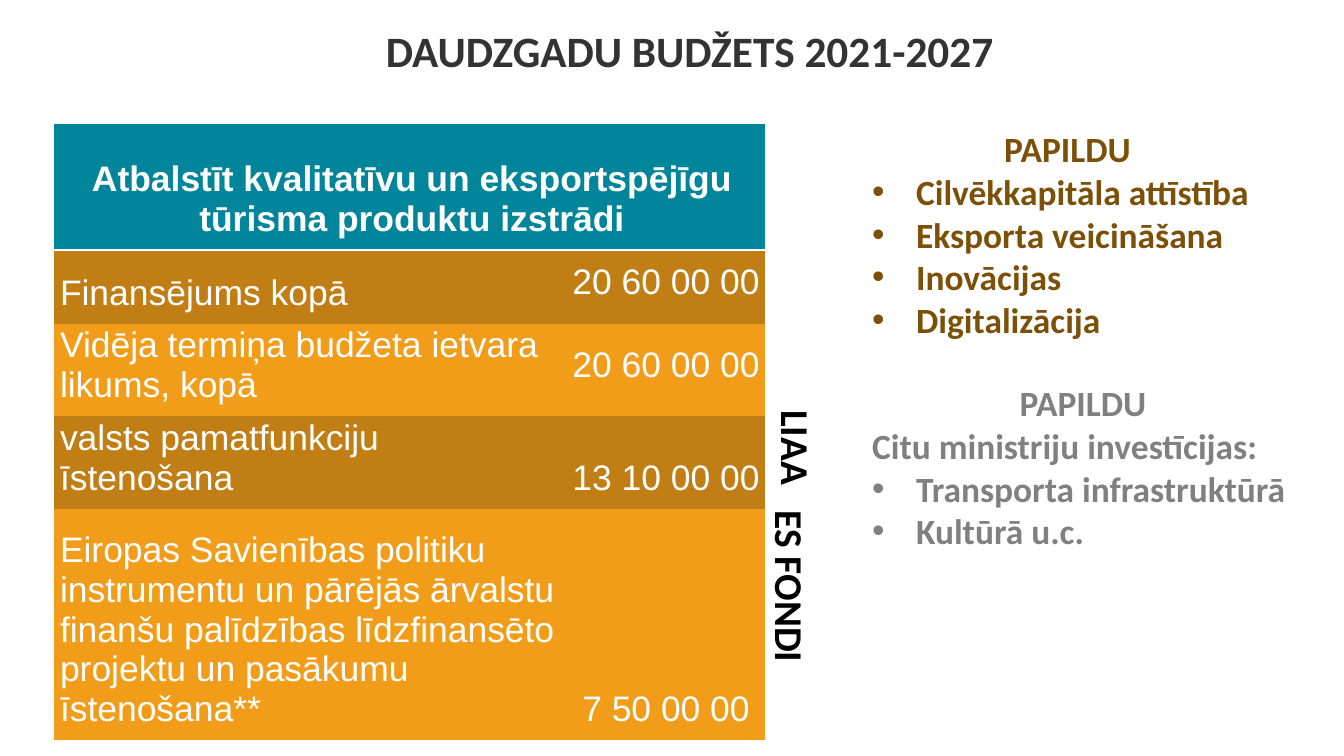
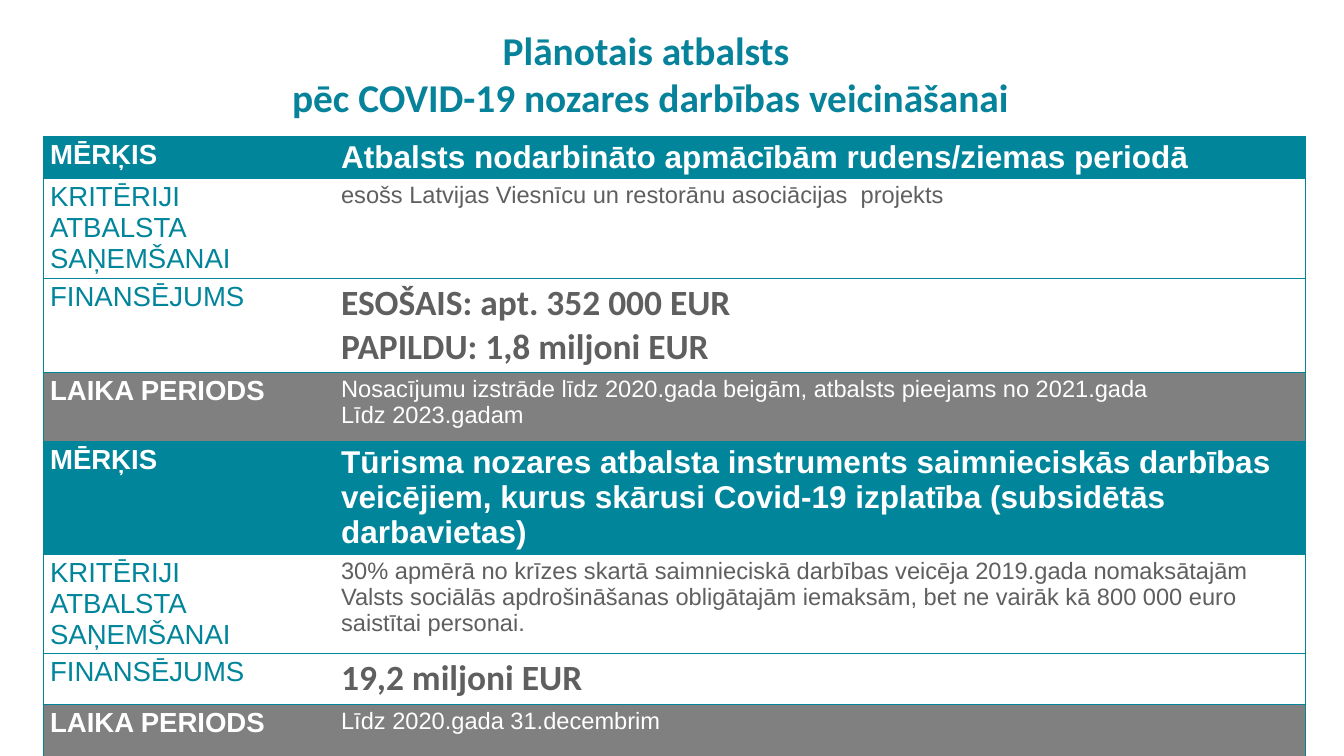
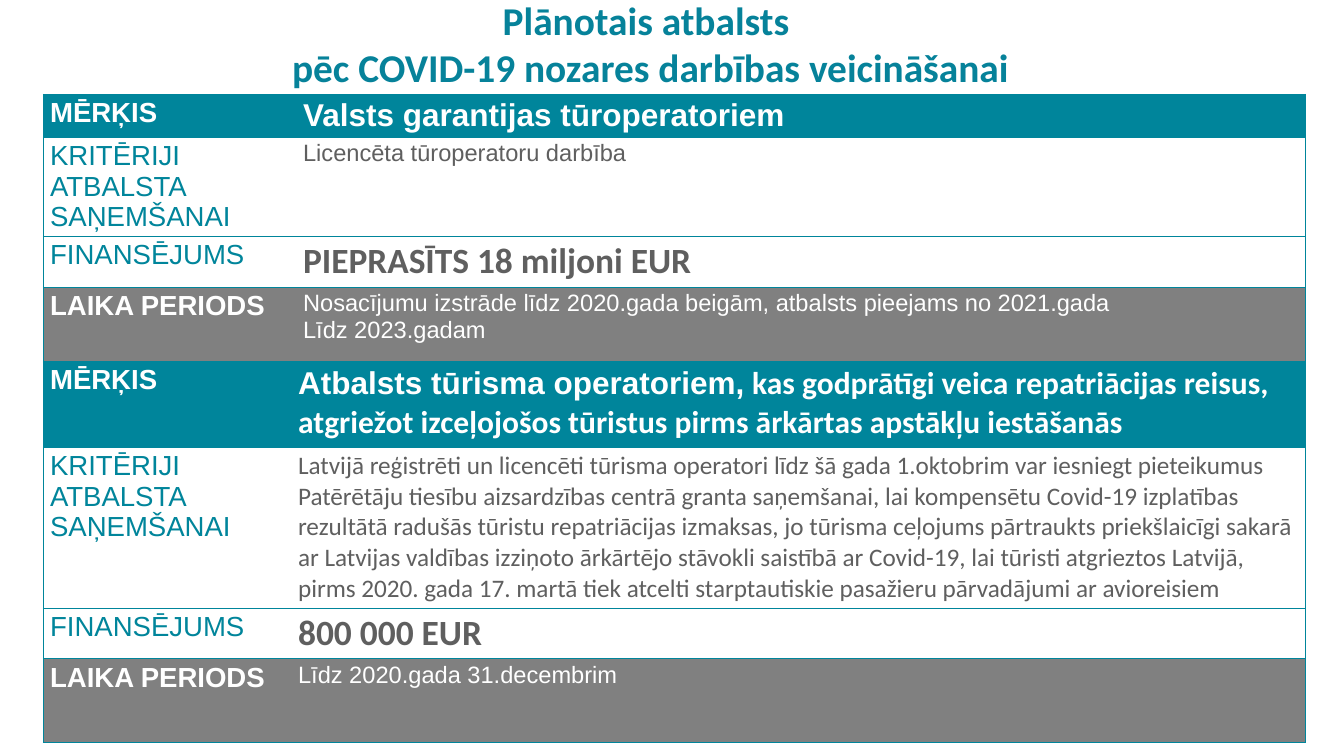
from lxml import etree
from pptx import Presentation
from pptx.dml.color import RGBColor
from pptx.enum.text import MSO_ANCHOR, MSO_AUTO_SIZE, PP_ALIGN
from pptx.oxml.ns import qn
from pptx.util import Emu, Pt

TOP, MIDDLE, BOTTOM = MSO_ANCHOR.TOP, MSO_ANCHOR.MIDDLE, MSO_ANCHOR.BOTTOM
LEFT, CENTER = PP_ALIGN.LEFT, PP_ALIGN.CENTER
NO_AUTOFIT = MSO_AUTO_SIZE.NONE
EMU_PER_PX = 12900
SLIDE_SIZE = (1344, 756)
TWO_CONTENT, TITLE_ONLY = 3, 5

TEAL, GRAY, WHITE = "00859B", "808080", "FFFFFF"
DARK_ORANGE, ORANGE = "C17E14", "F19D19"
BROWN, TEXT_GRAY = "7D5008", "5F5F5F"


def style(size, name, color, bold=False):
    return {"size": Pt(size), "name": name, "color": color, "bold": bold}


BUDGET_TITLE = style(44, "Calibri", "333333", True)
SUPPORT_TITLE = style(40, "Calibri", "06829A", True)
BUDGET_HEADER = style(36, "Arial", WHITE, True)
BUDGET_TEXT = style(36, "Arial", WHITE)
SIDE_LABEL = style(40, "Calibri", "000000", True)
GOAL = style(32, "Arial", WHITE, True)
GOAL_DETAIL = style(32, "Calibri", WHITE, True)
CRITERIA = style(24, "Arial", TEXT_GRAY)
LONG_CRITERIA = style(25.6, "Calibri", TEXT_GRAY)
AMOUNT = style(36, "Calibri", TEXT_GRAY, True)
PERIOD = style(24, "Arial", WHITE)
LABEL = style(28, "Arial", TEAL)
BAND_LABEL = style(28, "Arial", WHITE, True)

BUDGET = {
    "title": "DAUDZGADU BUDŽETS 2021-2027",
    "box": (54, 124), "columns": (508, 203), "heights": (126, 74, 92, 93, 231),
    "header": "Atbalstīt kvalitatīvu un eksportspējīgu tūrisma produktu izstrādi",
    "rows": [
        ("Finansējums kopā", "20 60 00 00", MIDDLE),
        ("Vidēja termiņa budžeta ietvara likums, kopā", "20 60 00 00", MIDDLE),
        ("valsts pamatfunkciju īstenošana", "13 10 00 00", BOTTOM),
        ("Eiropas Savienības politiku instrumentu un pārējās ārvalstu finanšu "
         "palīdzības līdzfinansēto projektu un pasākumu īstenošana**",
         "7 50 00 00", BOTTOM),
    ],
}
# Each list line: text, alignment, bulleted
EXTRA_LISTS = [
    ((865, 124, 405, 222), BROWN, [
        ("PAPILDU", CENTER, False),
        ("Cilvēkkapitāla attīstība", LEFT, True),
        ("Eksporta veicināšana", LEFT, True),
        ("Inovācijas", LEFT, True),
        ("Digitalizācija", LEFT, True)]),
    ((865, 378, 436, 179), GRAY, [
        ("PAPILDU", CENTER, False),
        ("Citu ministriju investīcijas:", LEFT, False),
        ("Transporta infrastruktūrā", LEFT, True),
        ("Kultūrā u.c.", LEFT, True)]),
]
SIDE_LABELS = [("LIAA", (664, 420, 265, 55)), ("ES FONDI", (658, 559, 265, 55))]

SUPPORT_HEADING = ["Plānotais atbalsts ", "pēc COVID-19 nozares darbības veicināšanai"]
# Label, label style, fill
SUPPORT_ROWS = [
    ("MĒRĶIS", BAND_LABEL, TEAL),
    ("KRITĒRIJI  ATBALSTA SAŅEMŠANAI", LABEL, WHITE),
    ("FINANSĒJUMS", LABEL, WHITE),
    ("LAIKA PERIODS", BAND_LABEL, GRAY),
]
FROM_2021 = [
    [("Nosacījumu izstrāde līdz 2020.gada beigām, atbalsts pieejams no 2021.gada", PERIOD)],
    [("Līdz 2023.gadam", PERIOD)],
]
UNTIL_DECEMBER = [[("Līdz 2020.gada 31.decembrim", PERIOD)]]
# Each value is a list of paragraphs, each paragraph a list of (text, style) runs
SUPPORT_SLIDES = [
    {"title_top": 0, "tables": [
        {"top": 136, "label_width": 291, "heights": (42, 100, 94, 69), "values": [
            [[("Atbalsts nodarbināto apmācībām rudens/ziemas periodā", GOAL)]],
            [[("esošs Latvijas Viesnīcu un restorānu asociācijas  projekts", CRITERIA)]],
            [[("ESOŠAIS: apt. 352 000 EUR", AMOUNT)],
             [("PAPILDU: 1,8 miljoni EUR", AMOUNT)]],
            FROM_2021]},
        {"top": 441, "label_width": 291, "heights": (113, 99, 51, 52), "values": [
            [[("Tūrisma nozares atbalsta instruments saimnieciskās darbības veicējiem, "
               "kurus skārusi Covid-19 izplatība (subsidētās darbavietas)", GOAL)]],
            [[("30% apmērā no krīzes skartā saimnieciskā darbības veicēja 2019.gada "
               "nomaksātajām Valsts sociālās apdrošināšanas obligātajām iemaksām, bet ne "
               "vairāk kā 800 000 euro saistītai personai.", CRITERIA)]],
            [[("19,2 miljoni EUR", AMOUNT)]],
            UNTIL_DECEMBER]},
    ]},
    {"title_top": -30, "tables": [
        {"top": 94, "label_width": 253, "heights": (43, 99, 50, 75), "values": [
            [[("Valsts garantijas tūroperatoriem", GOAL)]],
            [[("Licencēta tūroperatoru darbība", CRITERIA)]],
            [[("PIEPRASĪTS 18 miljoni EUR", AMOUNT)]],
            FROM_2021]},
        {"top": 361, "label_width": 248, "heights": (86, 159, 51, 84), "values": [
            [[("Atbalsts tūrisma operatoriem,", GOAL),
              (" kas godprātīgi veica repatriācijas reisus, atgriežot izceļojošos "
               "tūristus pirms ārkārtas apstākļu iestāšanās", GOAL_DETAIL)]],
            [[("Latvijā reģistrēti un licencēti tūrisma operatori līdz šā gada 1.oktobrim "
               "var iesniegt pieteikumus Patērētāju tiesību aizsardzības centrā granta "
               "saņemšanai, lai kompensētu Covid-19 izplatības rezultātā radušās tūristu "
               "repatriācijas izmaksas, jo tūrisma ceļojums pārtraukts priekšlaicīgi "
               "sakarā ar Latvijas valdības izziņoto ārkārtējo stāvokli saistībā ar "
               "Covid-19, lai tūristi atgrieztos Latvijā, pirms 2020. gada 17. martā tiek "
               "atcelti starptautiskie pasažieru pārvadājumi ar avioreisiem",
               LONG_CRITERIA)]],
            [[("800 000 EUR", AMOUNT)]],
            UNTIL_DECEMBER]},
    ]},
]
SUPPORT_LEFT, SUPPORT_WIDTH = 43, 1262


def px(value):
    return Emu(value * EMU_PER_PX)


def rgb(color):
    return RGBColor.from_string(color)


def write(frame, paragraphs, align=LEFT):
    """Fill a text frame with paragraphs given as lists of (text, style) runs."""
    for index, runs in enumerate(paragraphs):
        paragraph = frame.paragraphs[0] if index == 0 else frame.add_paragraph()
        paragraph.alignment = align
        paragraph.space_before = Pt(0)
        for text, formats in runs:
            run = paragraph.add_run()
            run.text = text
            for key, value in formats.items():
                if key == "color":
                    run.font.color.rgb = rgb(value)
                else:
                    setattr(run.font, key, value)


def place(shape, box):
    for key, value in zip(("left", "top", "width", "height"), box):
        setattr(shape, key, px(value))


def setup_frame(frame, anchor):
    for key, value in {"word_wrap": True, "auto_size": NO_AUTOFIT,
                       "vertical_anchor": anchor}.items():
        setattr(frame, key, value)


def add_title(slide, lines, formats, box, anchor):
    title = slide.shapes.title
    place(title, box)
    setup_frame(title.text_frame, anchor)
    write(title.text_frame, [[(line, formats)] for line in lines], CENTER)


def set_bullet(paragraph, bulleted):
    properties = paragraph._p.get_or_add_pPr()
    indent = px(44) if bulleted else 0
    properties.set("marL", str(indent))
    properties.set("indent", str(-indent))
    if bulleted:
        font = etree.SubElement(properties, qn("a:buFont"))
        font.set("typeface", "Arial")
        etree.SubElement(properties, qn("a:buChar")).set("char", "•")
    else:
        etree.SubElement(properties, qn("a:buNone"))


def set_borders(cell, lines):
    """Draw the sides named in lines as {side: (color, points)} and clear the others."""
    properties = cell._tc.get_or_add_tcPr()
    for index, side in enumerate("LRTB"):
        line = etree.Element(qn(f"a:ln{side}"))
        if side in lines:
            color, points = lines[side]
            line.set("w", str(Pt(points)))
            fill = etree.SubElement(line, qn("a:solidFill"))
            etree.SubElement(fill, qn("a:srgbClr")).set("val", color)
        else:
            etree.SubElement(line, qn("a:noFill"))
        properties.insert(index, line)


def add_table(slide, left, top, columns, heights):
    box = [px(value) for value in (left, top, sum(columns), sum(heights))]
    table = slide.shapes.add_table(len(heights), len(columns), *box).table
    table.first_row = table.horz_banding = False
    for column, width in zip(table.columns, columns):
        column.width = px(width)
    for row, height in zip(table.rows, heights):
        row.height = px(height)
    return table


def fill_cell(cell, paragraphs, color, lines, anchor=TOP, align=LEFT):
    cell.fill.solid()
    cell.fill.fore_color.rgb = rgb(color)
    cell.vertical_anchor = anchor
    set_borders(cell, lines)
    write(cell.text_frame, paragraphs, align)


def add_budget_table(slide):
    table = add_table(slide, *BUDGET["box"], BUDGET["columns"], BUDGET["heights"])
    margins = {"margin_left": px(6), "margin_top": px(1),
               "margin_right": px(1), "margin_bottom": px(11)}
    for cell in table.iter_cells():
        for key, value in margins.items():
            setattr(cell, key, value)
    white_line = (WHITE, 2)
    header = table.cell(0, 0)
    header.merge(table.cell(0, 1))
    fill_cell(header, [[(BUDGET["header"], BUDGET_HEADER)]], TEAL,
              {"B": white_line}, BOTTOM, CENTER)
    set_borders(table.cell(0, 1), {"B": white_line})
    for row, (name, amount, anchor) in enumerate(BUDGET["rows"], 1):
        color = DARK_ORANGE if row % 2 else ORANGE
        lines = {"T": white_line} if row == 1 else {}
        fill_cell(table.cell(row, 0), [[(name, BUDGET_TEXT)]], color, lines, BOTTOM)
        fill_cell(table.cell(row, 1), [[(amount, BUDGET_TEXT)]], color, lines,
                  anchor, CENTER)


def add_budget_slide(presentation):
    slide = presentation.slides.add_slide(presentation.slide_layouts[TWO_CONTENT])
    add_title(slide, [BUDGET["title"]], BUDGET_TITLE, (110, 20, 1160, 60), BOTTOM)
    add_budget_table(slide)
    for index, (box, color, lines) in enumerate(EXTRA_LISTS, 1):
        body = slide.placeholders[index]
        place(body, box)
        setup_frame(body.text_frame, TOP)
        formats = style(36, "Calibri", color, True)
        write(body.text_frame, [[(text, formats)] for text, _, _ in lines])
        for paragraph, (_, align, bulleted) in zip(body.text_frame.paragraphs, lines):
            paragraph.alignment = align
            set_bullet(paragraph, bulleted)
    for text, box in SIDE_LABELS:
        label = slide.shapes.add_textbox(*[px(value) for value in box])
        label.rotation = 90
        setup_frame(label.text_frame, TOP)
        write(label.text_frame, [[(text, SIDE_LABEL)]], CENTER)


def add_support_slide(presentation, content):
    slide = presentation.slides.add_slide(presentation.slide_layouts[TITLE_ONLY])
    add_title(slide, SUPPORT_HEADING, SUPPORT_TITLE,
              (0, content["title_top"], 1301, 146), MIDDLE)
    teal_line = (TEAL, 0.5)
    for block in content["tables"]:
        label_width = block["label_width"]
        table = add_table(slide, SUPPORT_LEFT, block["top"],
                          (label_width, SUPPORT_WIDTH - label_width), block["heights"])
        for row, (kind, value) in enumerate(zip(SUPPORT_ROWS, block["values"])):
            label, label_style, color = kind
            cells = [([[(label, label_style)]], "L"), (value, "R")]
            for column, (paragraphs, outer_side) in enumerate(cells):
                lines = dict.fromkeys(("T", "B", outer_side), teal_line)
                fill_cell(table.cell(row, column), paragraphs, color, lines)


def main():
    presentation = Presentation()
    presentation.slide_width, presentation.slide_height = map(px, SLIDE_SIZE)
    add_budget_slide(presentation)
    for content in SUPPORT_SLIDES:
        add_support_slide(presentation, content)
    presentation.save("out.pptx")


if __name__ == "__main__":
    main()
